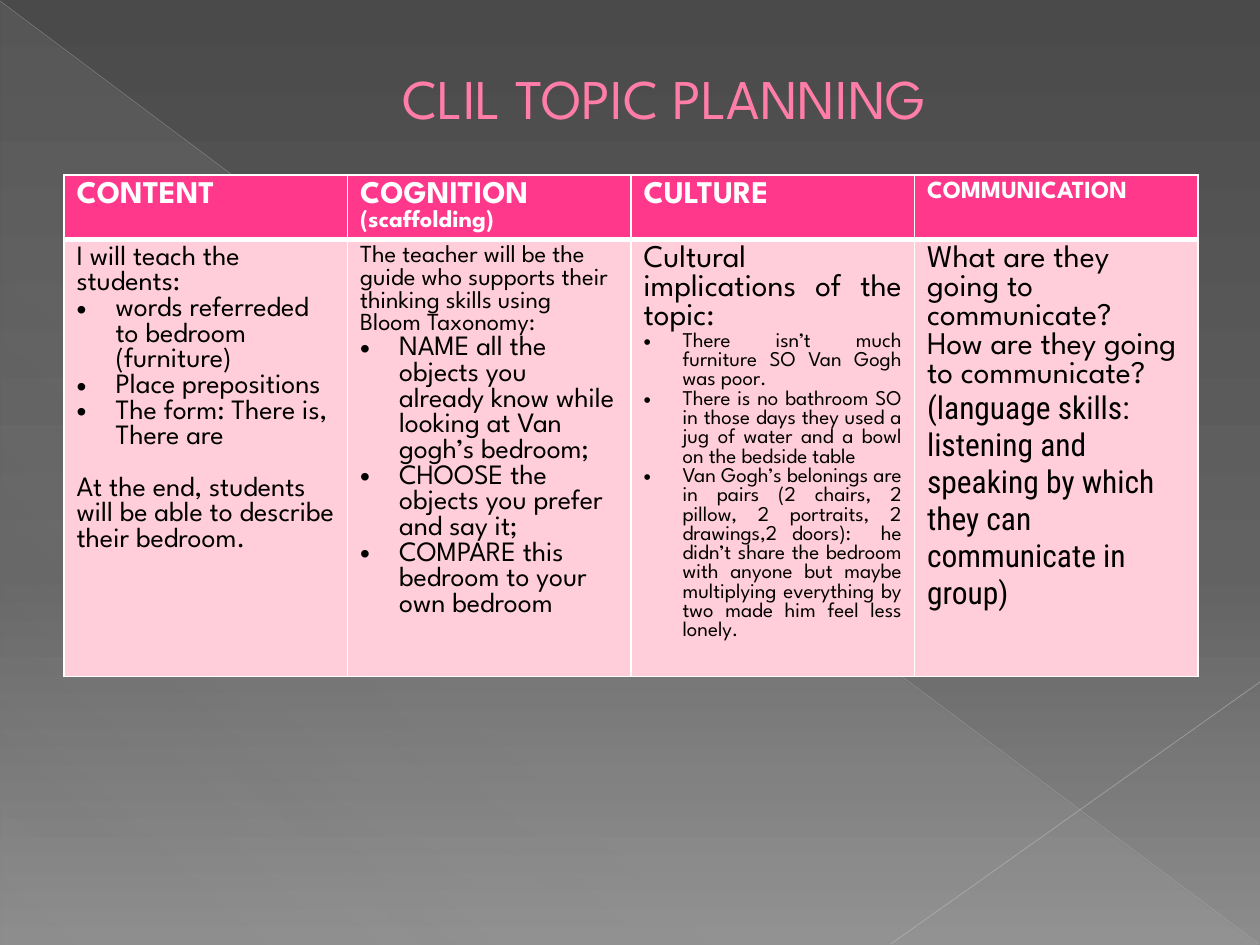
from typing import NamedTuple

from lxml.etree import SubElement as Sub
from pptx import Presentation
from pptx.dml.color import RGBColor
from pptx.enum.shapes import MSO_CONNECTOR as Link, MSO_SHAPE as Form
from pptx.enum.text import MSO_ANCHOR as Anchor, PP_ALIGN as Align
from pptx.oxml.ns import qn
from pptx.util import Pt

SPARTAN, ROBOTO = "League Spartan", "Roboto Condensed"
WHITE, BLACK, PINK, PALE, ROSE = "FFFFFF", "000000", "FF388C", "FFCEDA", "FF7DA7"
HANG = 39


class Bit(NamedTuple):
    text: str
    size: int
    font: str = SPARTAN


class Para(NamedTuple):
    bits: list[Bit]
    bullet: bool = False
    align: Align = Align.LEFT
    before: float = 0


class Stop(NamedTuple):
    place: int
    color: str
    alpha: int = 100


class Ray(NamedTuple):
    start: tuple[int, int]
    end: tuple[int, int]
    color: str
    width: float
    alpha: int


def emu(px: int) -> int:
    return round(px * 914400 / 126)


def rgb(color: str) -> RGBColor:
    return RGBColor.from_string(color)


def tint(parent, color: str, alpha: int = 100) -> None:
    """Add a colour, with its opacity in percent, to an XML fill."""
    node = Sub(parent, qn("a:srgbClr"), val=color)
    if alpha < 100:
        Sub(node, qn("a:alpha"), val=str(alpha * 1000))


def blend(props, stops: list[Stop], angle: int) -> None:
    """Swap the solid fill in props for a gradient."""
    solid = props.find(qn("a:solidFill"))
    grad = solid.makeelement(qn("a:gradFill"), {"rotWithShape": "1"})
    props.replace(solid, grad)
    items = Sub(grad, qn("a:gsLst"))
    for stop in stops:
        node = Sub(items, qn("a:gs"), pos=str(stop.place * 1000))
        tint(node, stop.color, stop.alpha)
    Sub(grad, qn("a:lin"), ang=str(angle * 60000), scaled="0")


def write(par, text: str, *, size: int, color: str, font: str = SPARTAN, bold: bool = False):
    run = par.add_run()
    run.text = text
    run.font.size, run.font.name, run.font.bold = Pt(size), font, bold
    run.font.color.rgb = rgb(color)
    return run


def draw_ray(shapes, ray: Ray) -> None:
    line = shapes.add_connector(Link.STRAIGHT, *map(emu, ray.start + ray.end))
    line.line.color.rgb = rgb(ray.color)
    line.line.width = Pt(ray.width)
    props = line._element.spPr
    tone = props.find(qn("a:ln")).find(qn("a:solidFill"))
    Sub(tone[0], qn("a:alpha"), val=str(ray.alpha * 1000))
    Sub(props, qn("a:effectLst"))


def edge(cell, **widths: int) -> None:
    """Draw white cell borders, with widths in points by side."""
    props = cell._tc.get_or_add_tcPr()
    for side, width in widths.items():
        line = Sub(props, qn(f"a:ln{side}"), w=str(Pt(width)))
        tint(Sub(line, qn("a:solidFill")), WHITE)


def fill_cell(cell, paras: list[Para], head: bool) -> None:
    edge(cell, L=1, R=1, T=1 if head else 3, B=3 if head else 1)
    cell.fill.solid()
    cell.fill.fore_color.rgb = rgb(PINK if head else PALE)
    frame = cell.text_frame
    for i, para in enumerate(paras):
        par = frame.add_paragraph() if i else frame.paragraphs[0]
        par.alignment = para.align
        if para.before:
            par.space_before = Pt(para.before)
        if para.bullet:
            props = par._p.get_or_add_pPr()
            props.set("marL", str(emu(HANG)))
            props.set("indent", str(-emu(HANG)))
            Sub(props, qn("a:buFont"), typeface="Arial")
            Sub(props, qn("a:buChar"), char="•")
        for bit in para.bits:
            write(par, bit.text, size=bit.size, font=bit.font,
                  color=WHITE if head else BLACK, bold=head)


def plain(text: str, size: int, **form) -> Para:
    return Para([Bit(text, size)], **form)


def points(size: int, *texts: str, align: Align = Align.LEFT) -> list[Para]:
    return [plain(text, size, bullet=True, align=align) for text in texts]


HEADS = [
    [plain("CONTENT", 18)],
    [Para([Bit("COGNITION ", 18), Bit("(scaffolding)", 14)])],
    [plain("CULTURE", 18)],
    [plain("COMMUNICATION", 14)],
]
BODIES = [
    [plain("I will teach the students:", 16),
     *points(16, "words referreded to bedroom (furniture)", "Place prepositions",
             "The form: There is, There are"),
     plain("At the end, students will be able to describe their bedroom.", 16, before=14.7)],
    [plain("The teacher will be the guide who supports their thinking skills "
           "using Bloom Taxonomy:", 14),
     *points(16, "NAME all the objects you already know while looking at Van gogh’s bedroom;",
             "CHOOSE the objects you prefer and say it;",
             "COMPARE this bedroom to your own bedroom")],
    [plain("Cultural implications of the topic:", 18, align=Align.JUSTIFY),
     *points(12, "There isn’t much furniture SO Van Gogh was poor.",
             "There is no bathroom SO in those days they used a jug of water "
             "and a bowl on the bedside table",
             "Van Gogh’s belonings are in pairs (2 chairs, 2 pillow, 2 portraits, "
             "2 drawings,2 doors):  he didn’t share the bedroom with anyone but maybe "
             "multiplying everything by two made him feel less lonely.",
             align=Align.JUSTIFY)],
    [plain("What are they going to communicate?", 18),
     plain("How are they going to communicate?", 18),
     Para([Bit("(language skills: listening and speaking by which they can "
               "communicate in group)", 18, ROBOTO)])],
]
RAYS = [
    Ray((0, 1), (1259, 944), "BFBFBF", 0.39, 35),
    Ray((1260, 682), (891, 944), "C6C6C6", 0.47, 45),
]


def draw_back(slide) -> None:
    back = slide.background
    back.fill.solid()
    blend(back._cSld.bg.bgPr, [Stop(0, "4A4A4A"), Stop(60, "626262"), Stop(100, "8C8C8C")], 90)
    wedge = slide.shapes.add_shape(Form.RIGHT_TRIANGLE, *map(emu, (1, 2, 1257, 942)))
    wedge.shadow.inherit = False
    wedge.line.fill.background()
    wedge.fill.solid()
    blend(wedge._element.spPr,
          [Stop(0, "D2D2D2", 10), Stop(70, "D2D2D2", 8), Stop(100, "D2D2D2", 1)], 133)
    for ray in RAYS:
        draw_ray(slide.shapes, ray)


def draw_title(slide) -> None:
    title = slide.shapes.title
    tree = title._element.getparent()
    tree.append(title._element)  # in front of the backdrop
    title.left, title.top, title.width, title.height = map(emu, (64, 1, 1134, 193))
    title.text_frame.vertical_anchor = Anchor.MIDDLE
    par = title.text_frame.paragraphs[0]
    par.alignment = Align.CENTER
    par._p.get_or_add_pPr().set("marL", str(emu(67)))
    run = write(par, "CLIL TOPIC PLANNING", size=32, color=ROSE)
    props = run._r.get_or_add_rPr()
    rim = props.makeelement(qn("a:ln"), {"w": str(Pt(0.5))})
    tint(Sub(rim, qn("a:solidFill")), "B12761")
    props.insert(0, rim)


def draw_table(slide) -> None:
    rows = [HEADS, BODIES]
    table = slide.shapes.add_table(2, 4, *map(emu, (64, 175, 1134, 501))).table
    for row, high in zip(table.rows, (64, 437)):
        row.height = emu(high)
    for r, cells in enumerate(rows):
        for c, paras in enumerate(cells):
            fill_cell(table.cell(r, c), paras, head=r == 0)


def main() -> None:
    deck = Presentation()
    deck.slide_width, deck.slide_height = emu(1260), emu(945)
    slide = deck.slides.add_slide(deck.slide_layouts[5])
    draw_back(slide)
    draw_title(slide)
    draw_table(slide)
    deck.save("out.pptx")


if __name__ == "__main__":
    main()
